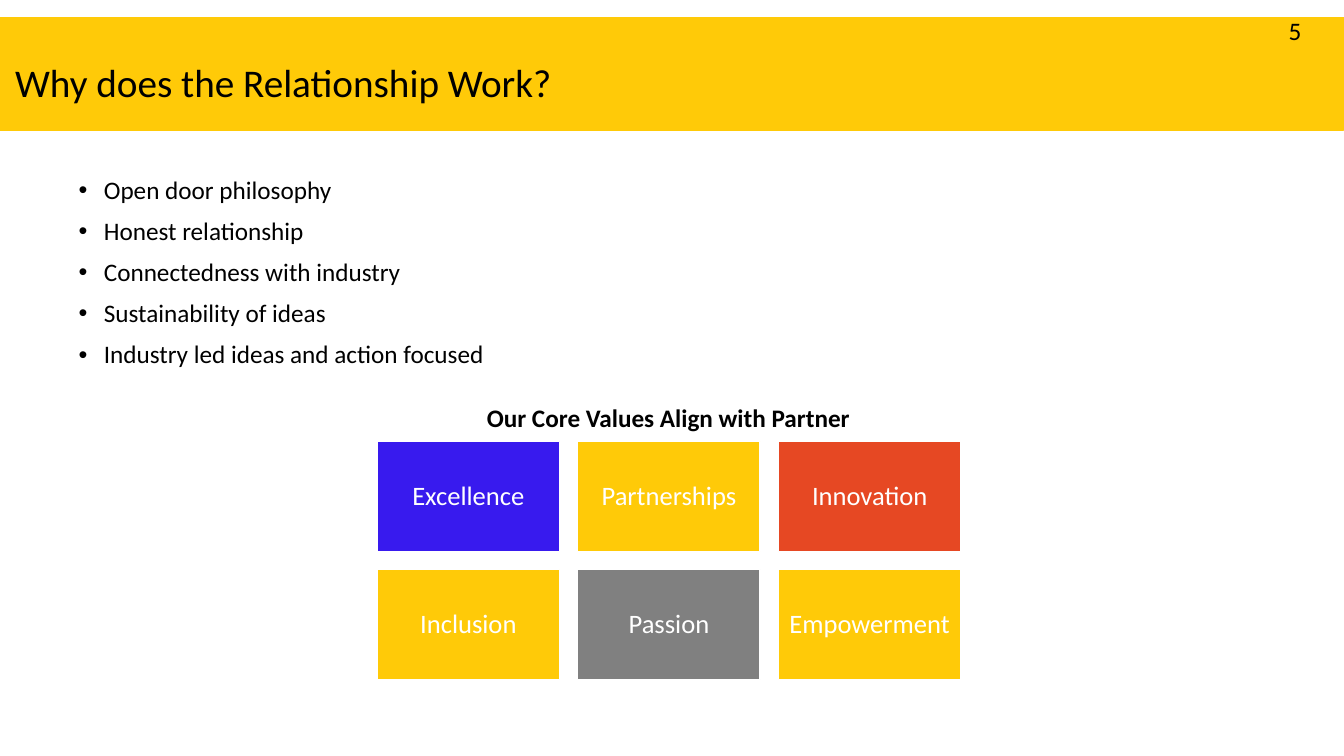
from lxml.etree import SubElement
from pptx import Presentation
from pptx.dml.color import RGBColor
from pptx.enum.shapes import MSO_SHAPE
from pptx.enum.text import MSO_ANCHOR, PP_ALIGN
from pptx.oxml.ns import qn
from pptx.util import Inches, Pt

BLACK = RGBColor(0x00, 0x00, 0x00)
WHITE = RGBColor(0xFF, 0xFF, 0xFF)
YELLOW = RGBColor(0xFF, 0xCA, 0x08)
BLUE = RGBColor(0x38, 0x1A, 0xEE)
RED = RGBColor(0xE6, 0x48, 0x23)
GREY = RGBColor(0x80, 0x80, 0x80)

TITLE = "Why does the Relationship Work?"
PAGE_NUMBER = "5"
REASONS = [
    "Open door philosophy",
    "Honest relationship",
    "Connectedness with industry",
    "Sustainability of ideas",
    "Industry led ideas and action focused",
]
VALUES_HEADING = "Our Core Values Align with Partner"
CORE_VALUES = [
    [("Excellence", BLUE), ("Partnerships", YELLOW), ("Innovation", RED)],
    [("Inclusion", YELLOW), ("Passion", GREY), ("Empowerment", YELLOW)],
]

GRID_LEFT, GRID_TOP = 3.74, 4.38
TILE_WIDTH, TILE_HEIGHT, TILE_GAP = 1.81, 1.09, 0.18


def write(part, lines, size, inset=0.05, color=BLACK, bold=False, wrap=True,
          anchor=MSO_ANCHOR.TOP, bullet=None, **paragraph_format):
    frame = part.text_frame
    frame_format = {"word_wrap": wrap, "vertical_anchor": anchor}
    for side in ("left", "top", "right", "bottom"):
        frame_format[f"margin_{side}"] = Inches(inset)
    for name, value in frame_format.items():
        setattr(frame, name, value)
    font_format = {"name": "Calibri", "size": Pt(size), "bold": bold}
    for index, line in enumerate(lines):
        paragraph = frame.add_paragraph() if index else frame.paragraphs[0]
        for name, value in paragraph_format.items():
            setattr(paragraph, name, value)
        if bullet:
            properties = paragraph._p.get_or_add_pPr()
            properties.set("marL", str(Inches(0.25)))
            properties.set("indent", str(Inches(-0.25)))
            SubElement(properties, qn("a:buFont")).set("typeface", "Arial")
            SubElement(properties, qn("a:buChar")).set("char", bullet)
            if index:
                paragraph.space_before = Pt(10)
        run = paragraph.add_run()
        run.text = line
        for name, value in font_format.items():
            setattr(run.font, name, value)
        run.font.color.rgb = color


def add_text(slide, box, lines, size, **text_format):
    part = slide.shapes.add_textbox(*map(Inches, box))
    write(part, lines, size, **text_format)


def add_block(slide, box, fill, line, line_width):
    block = slide.shapes.add_shape(MSO_SHAPE.RECTANGLE, *map(Inches, box))
    block.shadow.inherit = False
    block.fill.solid()
    block.fill.fore_color.rgb = fill
    block.line.color.rgb = line
    block.line.width = Pt(line_width)
    return block


def main():
    deck = Presentation()
    deck.slide_width, deck.slide_height = Inches(13.33), Inches(7.5)
    slide = deck.slides.add_slide(deck.slide_layouts[6])

    add_block(slide, (0, 0.17, 13.33, 1.12), YELLOW, YELLOW, 0.75)
    add_text(slide, (0.1, 0.12, 11.5, 1.45), [TITLE], 28,
             anchor=MSO_ANCHOR.MIDDLE, line_spacing=0.9)
    add_text(slide, (12.73, 0.1, 0.24, 0.36), [PAGE_NUMBER], 18, wrap=False)

    for row, values in enumerate(CORE_VALUES):
        for column, (value, fill) in enumerate(values):
            left = GRID_LEFT + column * (TILE_WIDTH + TILE_GAP)
            top = GRID_TOP + row * (TILE_HEIGHT + TILE_GAP)
            tile = add_block(slide, (left, top, TILE_WIDTH, TILE_HEIGHT),
                             fill, WHITE, 1)
            write(tile, [value], 19, inset=0.08, color=WHITE,
                  anchor=MSO_ANCHOR.MIDDLE, alignment=PP_ALIGN.CENTER,
                  line_spacing=0.9)

    add_text(slide, (4.49, 3.94, 4.28, 0.36), [VALUES_HEADING], 18,
             bold=True, alignment=PP_ALIGN.CENTER)
    add_text(slide, (0.73, 1.71, 4.91, 4.76), REASONS, 18, bullet="•",
             line_spacing=0.9)
    deck.save("out.pptx")


if __name__ == "__main__":
    main()
